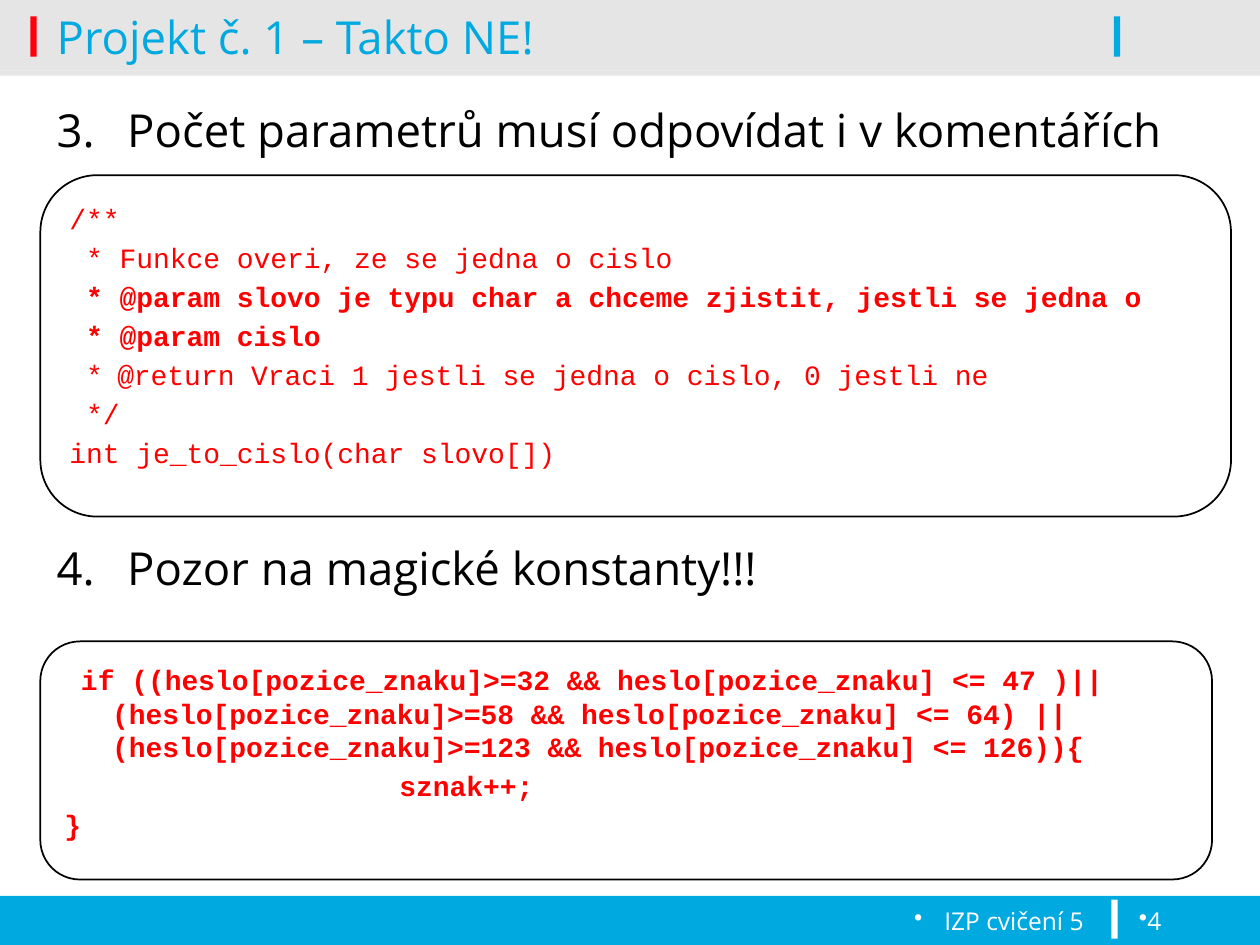
"""Build the slide on mistakes in project no. 1: comments and magic constants."""
import pptx
import pptx.util
import pptx.dml.color
import pptx.enum.shapes
import pptx.enum.text
import lxml.etree

Inches, Pt = pptx.util.Inches, pptx.util.Pt
ALIGN, ANCHOR = pptx.enum.text.PP_ALIGN, pptx.enum.text.MSO_ANCHOR
SHAPE = pptx.enum.shapes.MSO_SHAPE


def rgb(color):
    """Return the colour for a hex string."""
    return pptx.dml.color.RGBColor.from_string(color)


def add_text(p, text, fmt, color, indent=0, bullet=None, **attrs):
    """Write one formatted run with an optional hanging indent and bullet."""
    pPr = p._p.get_or_add_pPr()
    pPr.set("marL", str(Inches(indent)))
    pPr.set("indent", str(-Inches(indent)))
    tag, values = bullet or ("buNone", {})
    lxml.etree.SubElement(pPr, pptx.oxml.ns.qn("a:" + tag), values)
    for name, value in attrs.items():
        setattr(p, name, value)
    r = p.add_run()
    r.text = text
    for name, value in fmt.items():
        setattr(r.font, name, value)
    r.font.color.rgb = rgb(color)


HEADING = {"name": "Open Sans", "size": Pt(26)}
FOOTER = {"name": "Open Sans", "size": Pt(14)}
CODE = {"name": "Courier New", "size": Pt(16)}
BLUE, RED, WHITE, BLACK, GREY = "00A9E0", "FF0000", "FFFFFF", "000000", "E5E5E5"

prs = pptx.Presentation()
prs.slide_width, prs.slide_height = Inches(10), Inches(7.5)
s = prs.slides.add_slide(prs.slide_layouts[1])

bars = [
    (0, 7.11, 10, 0.39, BLUE),
    (0, 0.56, 10, 0.04, GREY),
    (0, 0, 10, 0.56, GREY),
    (0.24, 0.13, 0.05, 0.32, "FE000C"),
    (8.82, 7.14, 0.05, 0.31, WHITE),
    (8.84, 0.13, 0.05, 0.32, BLUE),
]
for *box, color in bars:
    sp = s.shapes.add_shape(SHAPE.RECTANGLE, *map(Inches, box))
    sp.shadow.inherit = False
    sp.fill.solid()
    sp.fill.fore_color.rgb = rgb(color)
    sp.line.fill.background()

title, body = s.placeholders
for sp, box, anchor in [
    (title, (0.35, -0.11, 8.42, 0.79), ANCHOR.MIDDLE),
    (body, (0.35, 0.76, 9.45, 5.91), ANCHOR.TOP),
]:
    sp.left, sp.top, sp.width, sp.height = map(Inches, box)
    s.shapes._spTree.append(sp._element)
    tf = sp.text_frame
    tf.word_wrap = True
    tf.auto_size = pptx.enum.text.MSO_AUTO_SIZE.NONE
    tf.vertical_anchor = anchor

add_text(title.text_frame.paragraphs[0], "Projekt č. 1 – Takto NE!", HEADING, BLUE,
         alignment=ALIGN.LEFT)

number = ("buAutoNum", {"type": "arabicPeriod", "startAt": "3"})
headings = [
    ("Počet parametrů musí odpovídat i v komentářích", 0),
    ("Pozor na magické konstanty!!!", 219),
]
tf = body.text_frame
for i, (text, gap) in enumerate(headings):
    p = tf.add_paragraph() if i else tf.paragraphs[0]
    add_text(p, text, HEADING, BLACK, 0.56, number, space_before=Pt(gap))

dot = ("buChar", {"char": "•"})
for box, text, indent, align in [
    ((0.12, 7.14, 8.58, 0.36), "IZP cvičení 5", 0.24, ALIGN.RIGHT),
    ((8.94, 7.14, 0.9, 0.36), "4", 0, ALIGN.LEFT),
]:
    tf = s.shapes.add_textbox(*map(Inches, box)).text_frame
    tf.word_wrap = True
    add_text(tf.paragraphs[0], text, FOOTER, WHITE, indent, dot, alignment=align)

comment = [
    ("/**", False),
    (" * Funkce overi, ze se jedna o cislo", False),
    (" * @param slovo je typu char a chceme zjistit, jestli se jedna o", True),
    (" * @param cislo", True),
    (" *\t@return Vraci 1 jestli se jedna o cislo, 0 jestli ne", False),
    (" */", False),
    ("int je_to_cislo(char slovo[])", False),
]
condition = [
    (" if ((heslo[pozice_znaku]>=32 && heslo[pozice_znaku] <= 47 )|| "
     "(heslo[pozice_znaku]>=58 && heslo[pozice_znaku] <= 64) || "
     "(heslo[pozice_znaku]>=123 && heslo[pozice_znaku] <= 126)){", True),
    ("                    sznak++;", True),
    ("}", True),
]
for box, lines in [
    ((0.32, 1.39, 9.45, 2.71), comment),
    ((0.32, 5.09, 9.3, 1.89), condition),
]:
    sp = s.shapes.add_shape(SHAPE.ROUNDED_RECTANGLE, *map(Inches, box))
    sp.shadow.inherit = False
    sp.fill.solid()
    sp.fill.fore_color.rgb = rgb(WHITE)
    sp.line.color.rgb = rgb(BLACK)
    sp.line.width = Pt(1)
    tf = sp.text_frame
    tf.word_wrap = True
    tf.vertical_anchor = ANCHOR.TOP
    tf.margin_top = Inches(0.08)
    for i, (text, bold) in enumerate(lines):
        p = tf.add_paragraph() if i else tf.paragraphs[0]
        add_text(p, text, {**CODE, "bold": bold}, RED, 0.38, alignment=ALIGN.LEFT,
                 line_spacing=Pt(19.1), space_before=Pt(3.2 if i else 0))

prs.save("out.pptx")
